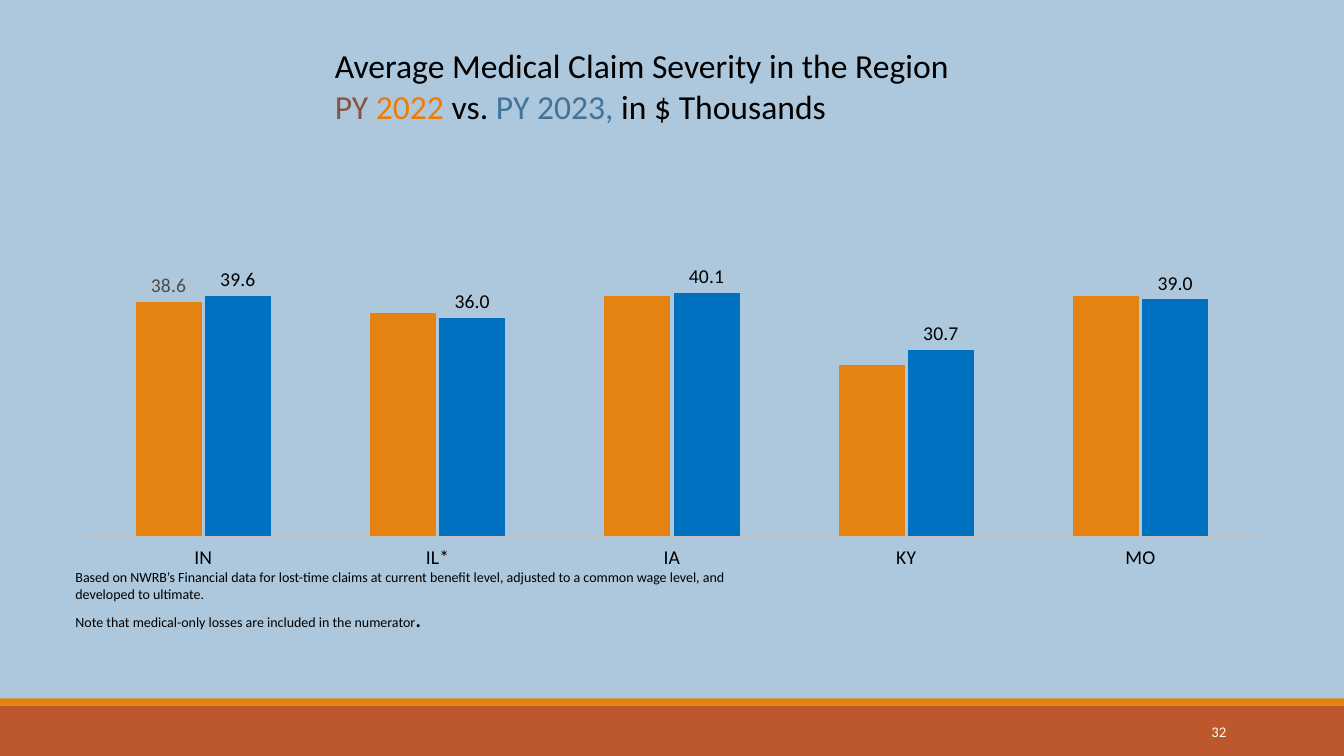
from pptx import Presentation
from pptx.chart.data import CategoryChartData
from pptx.dml.color import RGBColor
from pptx.enum.chart import XL_CHART_TYPE, XL_LABEL_POSITION, XL_TICK_LABEL_POSITION, XL_TICK_MARK
from pptx.enum.shapes import MSO_SHAPE
from pptx.enum.text import MSO_ANCHOR, MSO_AUTO_SIZE, PP_ALIGN
from pptx.util import Inches, Pt
from lxml import etree

FONT = "Calibri"
ORANGE, BLUE, RUST, BLACK = "E48312", "0070C0", "BD582C", "000000"


def color(hex_text):
    return RGBColor.from_string(hex_text)


def style_font(font, size, hex_text):
    font.name = FONT
    font.size = Pt(size)
    font.bold = False
    font.color.rgb = color(hex_text)


deck = Presentation()
deck.slide_width = Inches(13.33)
deck.slide_height = Inches(7.5)
page = deck.slides.add_slide(deck.slide_layouts[5])
page.background.fill.solid()
page.background.fill.fore_color.rgb = color("ADC8DD")

# Footer bands
for top, height, fill in [(7, 0.5, RUST), (6.93, 0.07, ORANGE)]:
    band = page.shapes.add_shape(
        MSO_SHAPE.RECTANGLE, 0, Inches(top), deck.slide_width, Inches(height))
    band.shadow.inherit = False
    band.fill.solid()
    band.fill.fore_color.rgb = color(fill)
    band.line.fill.background()

# Slide number
number_box = page.shapes.add_textbox(Inches(10.83), Inches(7.06), Inches(1.43), Inches(0.4))
number_box.text_frame.text = "32"
number_box.text_frame.word_wrap = True
number_box.text_frame.vertical_anchor = MSO_ANCHOR.MIDDLE
para = number_box.text_frame.paragraphs[0]
para.alignment = PP_ALIGN.RIGHT
para.line_spacing = Pt(12.4)
style_font(para.runs[0].font, 10.5, "FFFFFF")

# Title
title = page.shapes.title
title.left, title.top = Inches(3.22), Inches(0.4)
title.width, title.height = Inches(8.34), Inches(0.91)
title.text_frame.auto_size = MSO_AUTO_SIZE.NONE
title.text_frame.vertical_anchor = MSO_ANCHOR.TOP
title.text_frame.text = "Average Medical Claim Severity in the Region"
para = title.text_frame.paragraphs[0]
para.alignment = PP_ALIGN.LEFT
style_font(para.runs[0].font, 24, BLACK)
para.add_line_break()
for text, hex_text in [("PY ", "865640"), ("2022 ", "EF7C00"), ("vs. ", BLACK),
                       ("PY 2023, ", "40749B"), ("in $ Thousands", BLACK)]:
    span = para.add_run()
    span.text = text
    style_font(span.font, 24, hex_text)

# Footnotes
note_box = page.shapes.add_textbox(Inches(0.65), Inches(5.59), Inches(6.67), Inches(0.74))
note_frame = note_box.text_frame
note_frame.word_wrap = True
note_frame.text = (
    "Based on NWRB’s Financial data for lost-time claims at current benefit level, "
    "adjusted to a common wage level, and developed to ultimate.\n"
    "Note that medical-only losses are included in the numerator")
for para in note_frame.paragraphs:
    style_font(para.runs[0].font, 10, BLACK)
span = note_frame.paragraphs[1].add_run()
span.text = "."
style_font(span.font, 18, BLACK)

# Severity chart
chart_data = CategoryChartData(number_format="0.0")
chart_data.categories = ["IN", "IL*", "IA", "KY", "MO"]
chart_data.add_series("PY 2022", [38.6, 36.8, 39.5, 28.2, 39.6])
chart_data.add_series("PY 2023", [39.6, 36.0, 40.1, 30.7, 39.0])
chart = page.shapes.add_chart(
    XL_CHART_TYPE.COLUMN_CLUSTERED, Inches(0.65), Inches(1.25),
    Inches(12.03), Inches(5.01), chart_data).chart
chart.has_legend = False
chart.has_title = False
style_font(chart.font, 14, "4B4B4B")

plot = chart.plots[0]
plot.gap_width = 150
plot.overlap = -5
plot.vary_by_categories = False
for series, fill in zip(plot.series, [ORANGE, BLUE]):
    series.format.fill.solid()
    series.format.fill.fore_color.rgb = color(fill)
    series.invert_if_negative = False

older, newer = plot.series
older.data_labels.show_value = False
first_label = older.points[0].data_label
style_font(first_label.font, 14, "4B4B4B")
first_label.position = XL_LABEL_POSITION.OUTSIDE_END
labels = newer.data_labels
labels.show_value = True
labels.number_format = "0.0"
labels.number_format_is_linked = False
labels.position = XL_LABEL_POSITION.OUTSIDE_END
style_font(labels.font, 14, BLACK)

states = chart.category_axis
states.major_tick_mark = XL_TICK_MARK.NONE
states.tick_label_position = XL_TICK_LABEL_POSITION.LOW
states.format.line.color.rgb = color("BFBFBF")
states.format.line.width = Pt(1)
style_font(states.tick_labels.font, 14, BLACK)

severity = chart.value_axis
severity.minimum_scale, severity.maximum_scale = 0, 60
severity.major_unit = 10
severity.has_major_gridlines = False
severity.tick_label_position = XL_TICK_LABEL_POSITION.NONE
severity.format.line.fill.background()

# Fixed inner plot area, as fractions of the chart
plot_area = chart._chartSpace.chart.plotArea
namespace = etree.QName(plot_area).namespace
for old_layout in plot_area.findall(f"{{{namespace}}}layout"):
    plot_area.remove(old_layout)
layout = etree.Element(f"{{{namespace}}}layout")
manual = etree.SubElement(layout, f"{{{namespace}}}manualLayout")
for tag, value in [("layoutTarget", "inner"), ("xMode", "edge"), ("yMode", "edge"),
                   ("x", 0.017), ("y", 0.091), ("w", 0.966), ("h", 0.721)]:
    etree.SubElement(manual, f"{{{namespace}}}{tag}", val=str(value))
plot_area.insert(0, layout)

deck.save("out.pptx")
